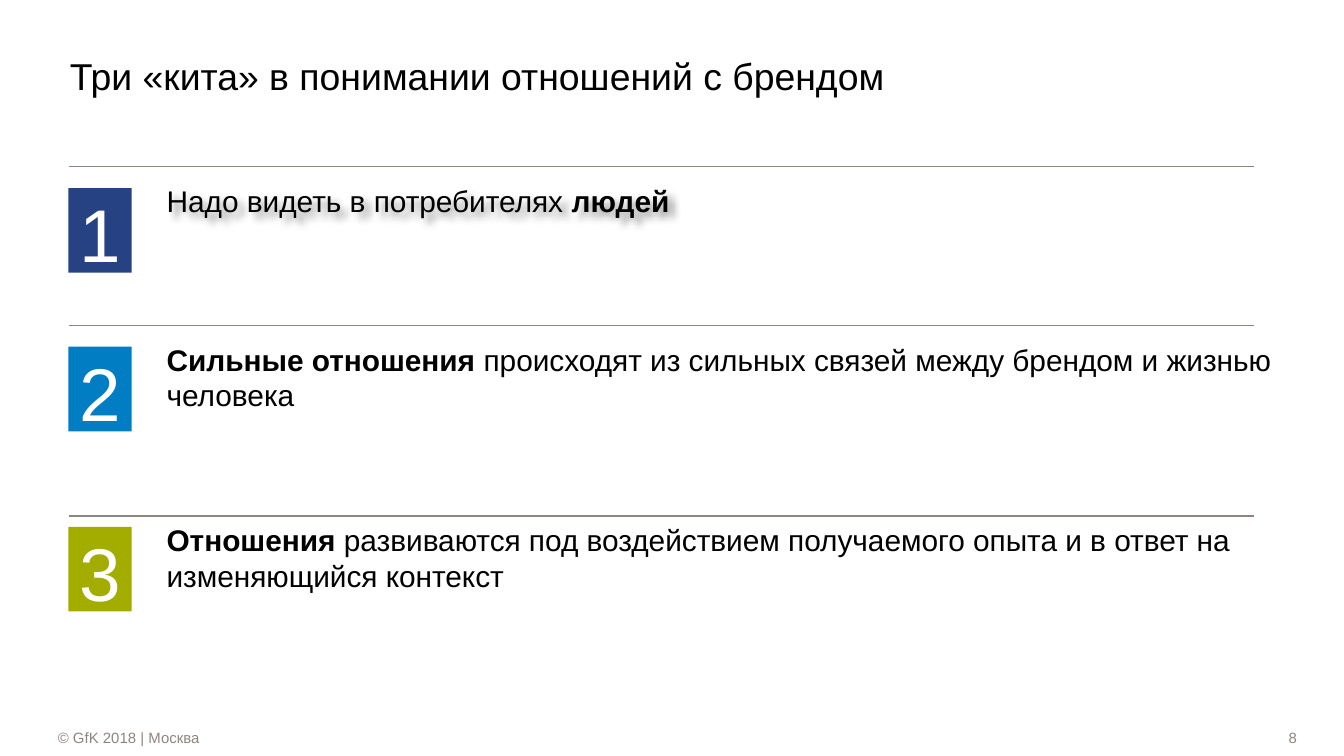
from lxml import etree
from pptx import Presentation
from pptx.dml.color import RGBColor
from pptx.enum.shapes import MSO_CONNECTOR, MSO_SHAPE
from pptx.enum.text import MSO_ANCHOR, PP_ALIGN
from pptx.oxml import parse_xml
from pptx.oxml.ns import nsdecls, qn
from pptx.util import Inches, Pt

STRAIGHT = MSO_CONNECTOR.STRAIGHT
RECT = MSO_SHAPE.RECTANGLE
TOP, MIDDLE, BOTTOM = MSO_ANCHOR.TOP, MSO_ANCHOR.MIDDLE, MSO_ANCHOR.BOTTOM
LEFT, CENTER, RIGHT = PP_ALIGN.LEFT, PP_ALIGN.CENTER, PP_ALIGN.RIGHT

BLACK = RGBColor(0x00, 0x00, 0x00)
WHITE = RGBColor(0xFF, 0xFF, 0xFF)
GRAY = RGBColor(0x8E, 0x85, 0x81)
NAVY = RGBColor(0x26, 0x42, 0x83)
BLUE = RGBColor(0x00, 0x7D, 0xC3)
OLIVE = RGBColor(0xA2, 0xAD, 0x00)

FONT = "Arial"
MARGIN = 0.51
RULE_END = 9.33
TEXT_LEFT = 1.15
BADGE_DROP = 0.08
NO_INSETS = (0, 0, 0, 0)

POINTS = [
    (1.24, 1.32, 8.11, 1.02, NAVY,
     [("Надо видеть в потребителях ", False), ("людей", True)]),
    (2.42, 2.5, 8.51, 0.94, BLUE,
     [("Сильные отношения ", True),
      ("происходят из сильных связей между брендом и жизнью человека", False)]),
    (3.84, 3.84, 8.77, 0.94, OLIVE,
     [("Отношения ", True),
      ("развиваются под воздействием получаемого опыта и в ответ на "
       "изменяющийся контекст", False)]),
]


def set_text(s, runs, size, color, align=LEFT, anchor=TOP,
             insets=(0.09, 0.04, 0.09, 0.04), wrap=True):
    tf = s.text_frame
    tf.word_wrap = wrap
    tf.vertical_anchor = anchor
    tf.margin_left, tf.margin_top, tf.margin_right, tf.margin_bottom = map(Inches, insets)
    p = tf.paragraphs[0]
    p.alignment = align
    for text, bold in runs:
        r = p.add_run()
        r.text = text
        r.font.name = FONT
        r.font.size = Pt(size)
        r.font.bold = bold
        r.font.color.rgb = color


def add_text(slide, box, runs, size, color, **layout):
    s = slide.shapes.add_textbox(*map(Inches, box))
    set_text(s, runs, size, color, **layout)
    return s


def add_block(slide, box, fill, text, size, color, **layout):
    s = slide.shapes.add_shape(RECT, *map(Inches, box))
    s.shadow.inherit = False
    s.fill.solid()
    s.fill.fore_color.rgb = fill
    s.line.fill.background()
    set_text(s, [(text, False)], size, color, insets=NO_INSETS, **layout)


def add_rule(slide, top):
    s = slide.shapes.add_connector(STRAIGHT, Inches(MARGIN), Inches(top),
                                   Inches(RULE_END), Inches(top))
    s.line.color.rgb = GRAY
    s.line.width = Pt(0.75)
    etree.SubElement(s._element.spPr, qn("a:effectLst"))


def add_text_shadow(s):
    s._element.spPr.append(parse_xml(
        f'<a:effectLst {nsdecls("a")}>'
        '<a:outerShdw blurRad="50800" dist="50800" dir="2700000" algn="tl" rotWithShape="0">'
        '<a:srgbClr val="000000"><a:alpha val="40000"/></a:srgbClr>'
        '</a:outerShdw></a:effectLst>'))


def add_point(slide, number, rule_top, top, width, height, color, runs):
    s = add_text(slide, (TEXT_LEFT, top, width, height), runs, 16, BLACK)
    add_block(slide, (MARGIN, top + BADGE_DROP, 0.47, 0.63), color, str(number),
              40, WHITE, align=CENTER, wrap=False)
    add_rule(slide, rule_top)
    return s


def add_footer(slide, left, width, text, align):
    add_block(slide, (left, 5.41, width, 0.16), WHITE, text, 8, GRAY,
              align=align, anchor=MIDDLE)


def main():
    prs = Presentation()
    prs.slide_width = Inches(10)
    prs.slide_height = prs.slide_width * 9 // 16
    slide = prs.slides.add_slide(prs.slide_layouts[6])

    add_footer(slide, 8.23, 1.42, "8", RIGHT)
    add_footer(slide, 0.43, 7.72, "© GfK 2018 | Москва", LEFT)
    add_text(slide, (0.43, -0.17, 8.43, 0.94),
             [("Три «кита» в понимании отношений с брендом", False)],
             20, BLACK, anchor=BOTTOM)
    points = [add_point(slide, number, *point) for number, point in enumerate(POINTS, 1)]
    add_text_shadow(points[0])

    prs.save("out.pptx")


if __name__ == "__main__":
    main()
